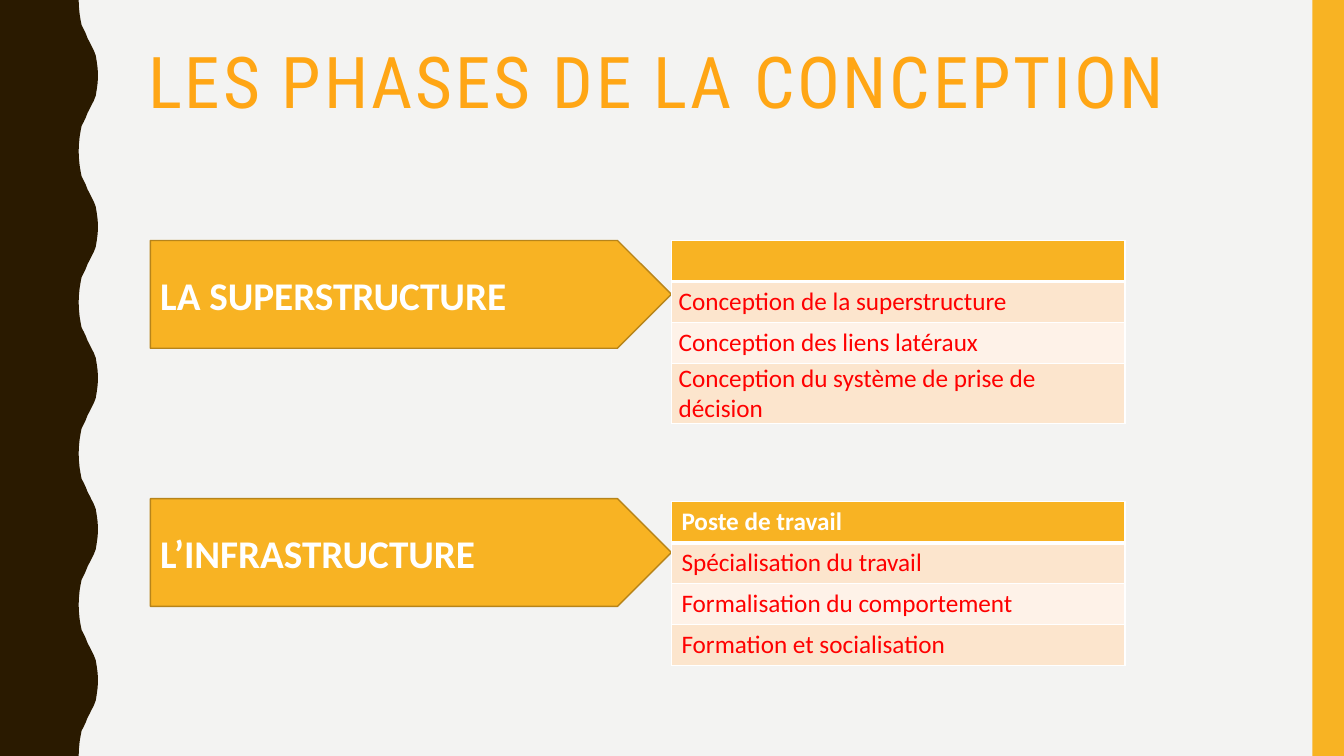
from lxml import etree
from pptx import Presentation
from pptx.dml.color import RGBColor
from pptx.enum.shapes import MSO_SHAPE
from pptx.enum.text import MSO_ANCHOR, PP_ALIGN
from pptx.oxml.ns import qn
from pptx.util import Pt

RECTANGLE = MSO_SHAPE.RECTANGLE
PENTAGON = MSO_SHAPE.PENTAGON
LEFT = PP_ALIGN.LEFT
TOP, MIDDLE = MSO_ANCHOR.TOP, MSO_ANCHOR.MIDDLE

PAPER = RGBColor(0xF3, 0xF3, 0xF2)
BROWN = RGBColor(0x2A, 0x1A, 0x00)
AMBER = RGBColor(0xF8, 0xB3, 0x23)
OCHRE = RGBColor(0xB7, 0x84, 0x1A)
ORANGE = RGBColor(0xFF, 0xA6, 0x15)
WHITE = RGBColor(0xFF, 0xFF, 0xFF)
RED = RGBColor(0xFF, 0x00, 0x00)
PEACH = RGBColor(0xFC, 0xE5, 0xCD)
CREAM = RGBColor(0xFE, 0xF2, 0xE8)


def style_text(para, text, size, color, bold=False, font_name="Calibri"):
    para.text = text
    para.alignment = LEFT
    para.font.name = font_name
    para.font.size = Pt(size)
    para.font.bold = bold
    para.font.color.rgb = color


def add_border(cell, side, width):
    line = etree.Element(qn("a:" + side), w=str(Pt(width)))
    solid = etree.SubElement(line, qn("a:solidFill"))
    etree.SubElement(solid, qn("a:srgbClr"), val=str(WHITE))
    return line


deck = Presentation()
deck.slide_width, deck.slide_height = Pt(960), Pt(540)
page = deck.slides.add_slide(deck.slide_layouts[6])
page.background.fill.solid()
page.background.fill.fore_color.rgb = PAPER

# Wavy left band: half a wave in tenths of a point, mirrored and repeated
half_wave = [(562, 0), (564, 50), (569, 101), (576, 144), (583, 180),
             (598, 209), (612, 238), (626, 274), (641, 302), (655, 331),
             (670, 360), (684, 396), (691, 439), (698, 490), (700, 540)]
wave_height = 1080
full_wave = half_wave + [(x, wave_height - y) for x, y in half_wave[-2::-1]]
edge = [(x, y + wave_height * i) for i in range(5) for x, y in full_wave]
builder = page.shapes.build_freeform(0, 0, scale=Pt(0.1))
builder.add_line_segments(edge + [(0, 5400)], close=True)
band = builder.convert_to_shape()
band.shadow.inherit = False
band.fill.solid()
band.fill.fore_color.rgb = BROWN
band.line.fill.background()

# Right stripe
stripe = page.shapes.add_shape(RECTANGLE, Pt(937.5), 0, Pt(22.5), Pt(540))
stripe.shadow.inherit = False
stripe.fill.solid()
stripe.fill.fore_color.rgb = AMBER
stripe.line.fill.background()

# Title
title = page.shapes.add_textbox(Pt(98.8), Pt(30.2), Pt(801.4), Pt(117.4))
title.text_frame.word_wrap = True
para = title.text_frame.paragraphs[0]
style_text(para, "LES PHASES DE LA CONCEPTION", 51, ORANGE,
           font_name="Roboto Condensed")
para.line_spacing = 0.9
para._p.get_or_add_pPr().get_or_add_defRPr().set("spc", "200")

# Phases: arrow top, label, table top, cell side margin, body anchor, rows
phases = [
    (171.8, "LA SUPERSTRUCTURE", 171.8, 5.2, MIDDLE,
     ["", "Conception de la superstructure", "Conception des liens latéraux",
      "Conception du système de prise de décision"]),
    (356.2, "L’INFRASTRUCTURE", 358.4, 7.2, TOP,
     ["Poste de travail", "Spécialisation du travail",
      "Formalisation du comportement", "Formation et socialisation"]),
]
row_height = 29.2
for arrow_top, label, table_top, margin, anchor, rows in phases:
    arrow = page.shapes.add_shape(PENTAGON, Pt(107.4), Pt(arrow_top),
                                  Pt(372.2), Pt(76.9))
    arrow.shadow.inherit = False
    arrow.fill.solid()
    arrow.fill.fore_color.rgb = AMBER
    arrow.line.color.rgb = OCHRE
    arrow.line.width = Pt(1)
    arrow.text_frame.word_wrap = True
    arrow.text_frame.vertical_anchor = MIDDLE
    style_text(arrow.text_frame.paragraphs[0], label, 28, WHITE, bold=True)

    table = page.shapes.add_table(len(rows), 1, Pt(479.6), Pt(table_top),
                                  Pt(324), Pt(row_height * len(rows))).table
    table.first_row = table.horz_banding = False
    for index, text in enumerate(rows):
        header = index == 0
        table.rows[index].height = Pt(row_height)
        cell = table.cell(index, 0)
        cell.margin_left = cell.margin_right = Pt(margin)
        if anchor == MIDDLE and not header:
            cell.margin_top = cell.margin_bottom = 0
        cell.vertical_anchor = TOP if header else anchor
        style_text(cell.text_frame.paragraphs[0], text, 18,
                   WHITE if header else RED, bold=header)
        # Borders come before the fill in the cell properties
        widths = {"lnL": 1, "lnR": 1, "lnT": 3 if index == 1 else 1,
                  "lnB": 3 if header else 1}
        for side, width in widths.items():
            cell._tc.get_or_add_tcPr().append(add_border(cell, side, width))
        cell.fill.solid()
        cell.fill.fore_color.rgb = (
            AMBER if header else PEACH if index % 2 else CREAM)

deck.save("out.pptx")
